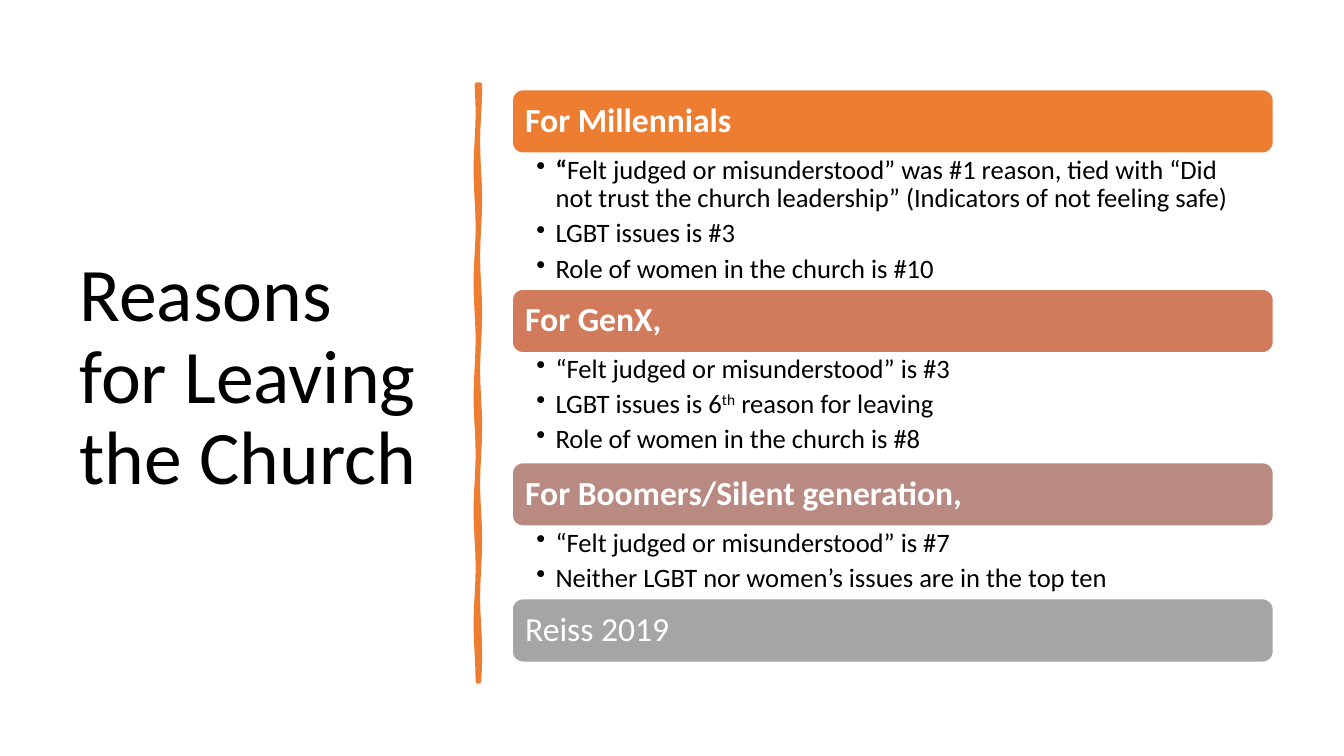
import math

from lxml import etree
from pptx import Presentation, util as u
from pptx.dml.color import RGBColor
from pptx.enum import shapes, text
from pptx.oxml.ns import qn

INK = {"black": "000000", "white": "FFFFFF", "orange": "ED7D31",
       "coral": "D17B5C", "rose": "B98A82", "gray": "A5A5A5"}
FONT = "Calibri"
BAND = 0.63

# Band title, band colour, bold title, height of the list, list items.
# An item is a list of runs: (words, style).
PARTS = [
    ("For Millennials", "orange", True, 1.35, [
        [("“", "bold"),
         ("Felt judged or misunderstood” was #1 reason, tied with “Did not "
          "trust the church leadership” (Indicators of not feeling safe)", "")],
        [("LGBT issues is #3", "")],
        [("Role of women in the church is #10", "")]]),
    ("For GenX,", "coral", True, 1.09, [
        [("“Felt judged or misunderstood” is #3", "")],
        [("LGBT issues is 6", ""), ("th", "super"), (" reason for leaving", "")],
        [("Role of women in the church is #8", "")]]),
    ("For Boomers/Silent generation,", "rose", True, 0.72, [
        [("“Felt judged or misunderstood” is #7", "")],
        [("Neither LGBT nor women’s issues are in the top ten", "")]]),
    ("Reiss 2019", "gray", False, 0, []),
]


def color(name):
    return RGBColor.from_string(INK[name])


def add_run(para, words, size, ink, bold=False):
    run = para.add_run()
    run.text = words
    font = run.font
    font.name, font.size, font.bold = FONT, u.Pt(size), bold
    font.color.rgb = color(ink)
    return run


def set_frame(frame, anchor, left, top, right, bottom):
    frame.word_wrap = True
    frame.auto_size = text.MSO_AUTO_SIZE.NONE
    frame.vertical_anchor = anchor
    frame.margin_left, frame.margin_top = u.Inches(left), u.Inches(top)
    frame.margin_right, frame.margin_bottom = u.Inches(right), u.Inches(bottom)


def set_para(para, after=0):
    para.alignment = text.PP_ALIGN.LEFT
    para.line_spacing = 0.9
    para.space_before, para.space_after = u.Pt(0), u.Pt(after)


def add_title(slide, left, top, width, height):
    title = slide.shapes.title
    title.left, title.top = u.Inches(left), u.Inches(top)
    title.width, title.height = u.Inches(width), u.Inches(height)
    set_frame(title.text_frame, text.MSO_ANCHOR.MIDDLE, 0.1, 0.05, 0.25, 0.05)
    para = title.text_frame.paragraphs[0]
    set_para(para)
    add_run(para, "Reasons for Leaving the Church", 54, "black")


def add_rule(slide, left, top, width, height):
    """Draw an upright brush stroke with wavy edges."""
    steps = 60

    def edge(x, phase):
        return [(u.Inches(x + 0.01 * math.sin(phase + i * 0.55)),
                 u.Inches(top + height * i / steps)) for i in range(steps + 1)]

    points = edge(left, 0) + edge(left + width, 1.5)[::-1]
    pen = slide.shapes.build_freeform(*points[0])
    pen.add_line_segments(points[1:], close=True)
    rule = pen.convert_to_shape()
    rule.shadow.inherit = False
    rule.fill.solid()
    rule.fill.fore_color.rgb = color("orange")
    rule.line.color.rgb = color("orange")
    rule.line.width = u.Pt(3.25)


def add_band(slide, left, top, width, words, ink, bold):
    band = slide.shapes.add_shape(
        shapes.MSO_SHAPE.ROUNDED_RECTANGLE, u.Inches(left), u.Inches(top),
        u.Inches(width), u.Inches(BAND))
    band.shadow.inherit = False
    band.fill.solid()
    band.fill.fore_color.rgb = color(ink)
    band.line.color.rgb = color("white")
    band.line.width = u.Pt(1)
    set_frame(band.text_frame, text.MSO_ANCHOR.MIDDLE, 0.1, 0.1, 0.1, 0.1)
    para = band.text_frame.paragraphs[0]
    set_para(para)
    add_run(para, words, 24, "white", bold)


def add_bullet(para):
    props = para._p.get_or_add_pPr()
    props.set("marL", str(u.Inches(0.19)))
    props.set("indent", str(-u.Inches(0.19)))
    etree.SubElement(props, qn("a:buChar")).set("char", "•")


def add_list(slide, left, top, width, height, items):
    box = slide.shapes.add_textbox(u.Inches(left), u.Inches(top),
                                   u.Inches(width), u.Inches(height))
    frame = box.text_frame
    set_frame(frame, text.MSO_ANCHOR.TOP, 0.24, 0.03, 0.19, 0.03)
    for i, item in enumerate(items):
        para = frame.add_paragraph() if i else frame.paragraphs[0]
        para.level = 1
        set_para(para, 4.5)
        add_bullet(para)
        for words, style in item:
            run = add_run(para, words, 19, "black", style == "bold")
            if style == "super":
                run._r.get_or_add_rPr().set("baseline", "30000")


def add_parts(slide, left, top, width):
    """Stack the bands, each with its list below."""
    for words, ink, bold, height, items in PARTS:
        add_band(slide, left, top, width, words, ink, bold)
        top += BAND
        if items:
            add_list(slide, left, top, width, height, items)
        top += height


def main():
    deck = Presentation()
    deck.slide_width, deck.slide_height = u.Inches(13.33), u.Inches(7.5)
    slide = deck.slides.add_slide(deck.slide_layouts[5])
    add_title(slide, 0.69, 0.7, 3.74, 6.11)
    add_rule(slide, 4.73, 0.84, 0.02, 5.92)
    add_parts(slide, 5.08, 0.89, 7.55)
    deck.save("out.pptx")


if __name__ == "__main__":
    main()
